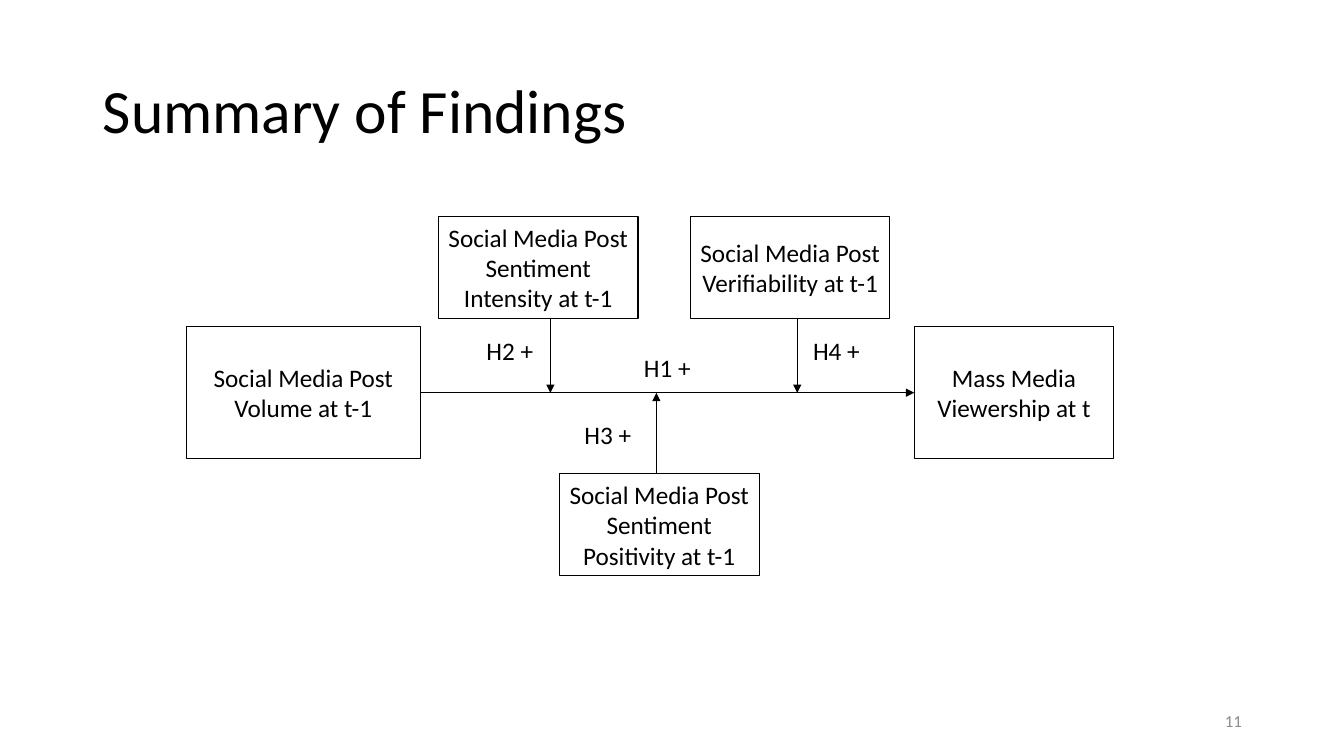
from pptx import Presentation
from pptx import util as u
from pptx.dml.color import RGBColor
from pptx.enum import shapes, text
from pptx.oxml.ns import qn
from lxml import etree

COLORS = {"ink": "000000", "page": "8C8C8C"}
FONT = "Calibri"
AXIS_Y = 9.9                     # height of the main effect arrow
TOP_Y, LOW_Y = 5.46, 11.94       # tops of the moderator boxes
SIDE_Y, SIDE_H = 8.23, 3.33
BOX_W, BOX_H = 5.03, 2.57
LABEL_W, LABEL_H = 1.7, 1.02


def color(name):
    return RGBColor.from_string(COLORS[name])


def write(sp, words, size=18, ink="ink", align=text.PP_ALIGN.LEFT,
          wrap=True, spacing=1.0):
    tf = sp.text_frame
    frame_format = {"word_wrap": wrap,
                    "vertical_anchor": text.MSO_ANCHOR.MIDDLE}
    for name, value in frame_format.items():
        setattr(tf, name, value)
    p = tf.paragraphs[0]
    p.alignment, p.line_spacing = align, spacing
    r = p.add_run()
    r.text = words
    for name, value in {"name": FONT, "size": u.Pt(size)}.items():
        setattr(r.font, name, value)
    r.font.color.rgb = color(ink)


def add_text(s, words, x, y, w, h, **fmt):
    sp = s.shapes.add_textbox(u.Cm(x), u.Cm(y), u.Cm(w), u.Cm(h))
    write(sp, words, **fmt)


def add_box(s, words, x, y, w=BOX_W, h=BOX_H):
    sp = s.shapes.add_shape(shapes.MSO_SHAPE.RECTANGLE,
                            u.Cm(x), u.Cm(y), u.Cm(w), u.Cm(h))
    sp.shadow.inherit = False
    sp.fill.background()
    sp.line.color.rgb = color("ink")
    sp.line.width = u.Pt(0.75)
    write(sp, words, align=text.PP_ALIGN.CENTER)
    return sp


def add_arrow(s, x1, y1, x2, y2):
    c = s.shapes.add_connector(shapes.MSO_CONNECTOR.STRAIGHT,
                               u.Cm(x1), u.Cm(y1), u.Cm(x2), u.Cm(y2))
    c.line.color.rgb = color("ink")
    c.line.width = u.Pt(0.5)
    etree.SubElement(c.line._get_or_add_ln(), qn("a:tailEnd"), type="triangle")
    etree.SubElement(c._element.spPr, qn("a:effectLst"))
    return c


def main():
    prs = Presentation()
    prs.slide_width, prs.slide_height = u.Cm(33.87), u.Cm(19.05)
    s = prs.slides.add_slide(prs.slide_layouts[6])

    # Title
    add_text(s, "Summary of Findings", 2.34, 1.02, 29.21, 3.68,
             size=44, spacing=0.9)

    # Main effect
    volume = add_box(s, "Social Media Post Volume at t-1",
                     4.7, SIDE_Y, 5.89, SIDE_H)
    viewership = add_box(s, "Mass Media Viewership at t",
                         23.04, SIDE_Y, BOX_W, SIDE_H)
    effect = add_arrow(s, 10.59, AXIS_Y, 23.04, AXIS_Y)
    effect.begin_connect(volume, 3)
    effect.end_connect(viewership, 1)

    # Moderators: words, box left, box top, arrow x, arrow start
    moderators = [
        ("Social Media Post Verifiability at t-1",
         17.4, TOP_Y, 20.09, TOP_Y + BOX_H),
        ("Social Media Post Sentiment Positivity at t-1",
         14.1, LOW_Y, 16.54, LOW_Y),
        ("Social Media Post Sentiment Intensity at t-1",
         11.05, TOP_Y, 13.87, TOP_Y + BOX_H),
    ]
    for words, x, y, arrow_x, start_y in moderators:
        add_box(s, words, x, y)
        add_arrow(s, arrow_x, start_y, arrow_x, AXIS_Y)

    # Hypothesis labels
    for words, x, y in [("H1 +", 15.98, 8.76), ("H3 +", 14.48, 10.44),
                        ("H2 +", 12.01, 8.33), ("H4 +", 20.24, 8.33)]:
        add_text(s, words, x, y, LABEL_W, LABEL_H, wrap=False)

    # Page number
    add_text(s, "11", 23.93, 17.65, 7.62, 1.02, size=12, ink="page",
             align=text.PP_ALIGN.RIGHT)

    prs.save("out.pptx")


if __name__ == "__main__":
    main()
